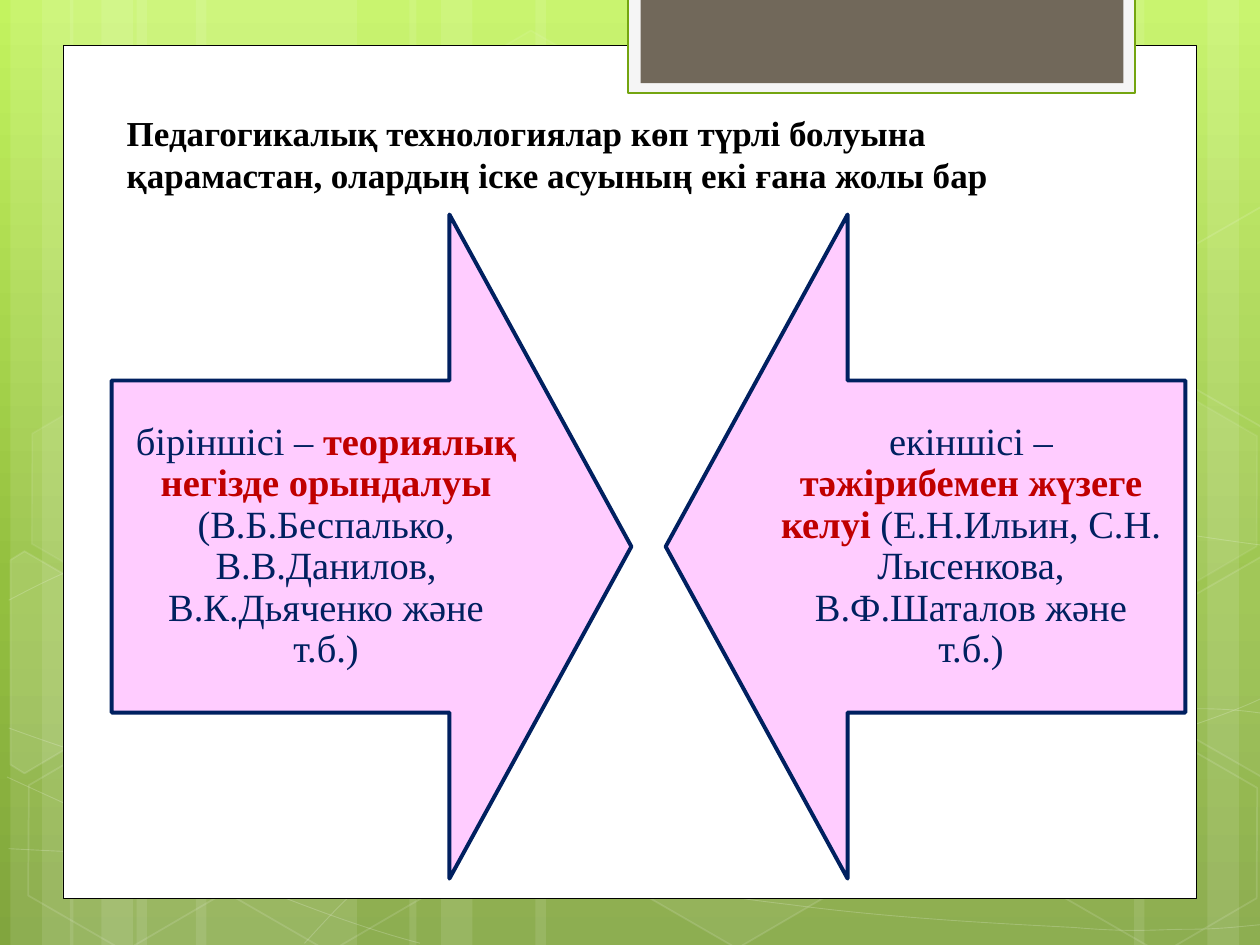
from copy import deepcopy
from dataclasses import dataclass

from lxml.etree import SubElement
from pptx import Presentation
from pptx.dml.color import RGBColor
from pptx.enum.shapes import MSO_SHAPE
from pptx.enum.text import MSO_ANCHOR, MSO_AUTO_SIZE, PP_ALIGN
from pptx.oxml.ns import qn
from pptx.util import Pt

RECT, HEXAGON = MSO_SHAPE.RECTANGLE, MSO_SHAPE.HEXAGON
RIGHT, LEFT = MSO_SHAPE.RIGHT_ARROW, MSO_SHAPE.LEFT_ARROW
TOP, MIDDLE = MSO_ANCHOR.TOP, MSO_ANCHOR.MIDDLE
NO_FIT = MSO_AUTO_SIZE.NONE
AT_LEFT, CENTER = PP_ALIGN.LEFT, PP_ALIGN.CENTER


@dataclass(frozen=True)
class Theme:
    font: str = "Times New Roman"
    head: int = 20
    body: int = 22
    sky: tuple = ((0, "C3F35F"), (62, "93BF3F"), (100, "81A53E"))
    white: str = "FFFFFF"
    black: str = "000000"
    pale: str = "F5F5F5"
    green: str = "74A510"
    taupe: str = "71685A"
    pink: str = "FFCCFF"
    navy: str = "002060"
    red: str = "C00000"


class Deck:
    def __init__(self, theme):
        self.theme = theme
        self.file = Presentation()
        self.file.slide_width, self.file.slide_height = Pt(720), Pt(540)
        self.layout = self.file.slide_layouts[5]
        self.slide = self.file.slides.add_slide(self.layout)
        self.shapes = self.slide.shapes

    def backdrop(self):
        fill = self.slide.background.fill
        fill.gradient()
        fill.gradient_angle = 270
        stops = next(self.slide._element.iter(qn("a:gsLst")))
        stops.append(deepcopy(stops[-1]))
        for stop, (at, color) in zip(fill.gradient_stops, self.theme.sky):
            stop.position = at / 100
            stop.color.rgb = RGBColor.from_string(color)

    def settle(self):
        """Move the decor drawn so far to the slide's layout."""
        for shape in list(self.shapes):
            if not shape.is_placeholder:
                self.layout.shapes._spTree.append(shape._element)

    def paint(self, shape, fill=None, line=None, width=1, clear=(100, 100)):
        """Set fill and line; clear holds their opacities in percent."""
        shape.shadow.inherit = False
        if fill:
            shape.fill.solid()
            shape.fill.fore_color.rgb = RGBColor.from_string(fill)
        else:
            shape.fill.background()
        if line:
            shape.line.color.rgb = RGBColor.from_string(line)
            shape.line.width = Pt(width)
        else:
            shape.line.fill.background()
        for base, part in zip(("a:solidFill", "a:ln/a:solidFill"), clear):
            for node in shape._element.spPr.xpath(base + "/a:srgbClr"):
                if part < 100:
                    SubElement(node, qn("a:alpha"), val=str(part * 1000))

    def block(self, kind, box, **style):
        shape = self.shapes.add_shape(kind, *map(Pt, box))
        self.paint(shape, **style)
        return shape

    def outline(self, points, close=False, **style):
        spots = [(Pt(x), Pt(y)) for x, y in points]
        pen = self.shapes.build_freeform(*spots[0])
        pen.add_line_segments(spots[1:], close=close)
        shape = pen.convert_to_shape()
        self.paint(shape, **style)
        return shape

    def curve(self, knots):
        """Draw a chain of cubic curves: a start, then three points each."""
        shape = self.outline(knots, line=self.theme.white, width=0.5,
                             clear=(100, 20))
        track = next(shape._element.iter(qn("a:path")))
        legs = track.findall(qn("a:lnTo"))
        for i in range(0, len(legs), 3):
            bend = SubElement(track, qn("a:cubicBezTo"))
            for leg in legs[i:i + 3]:
                bend.append(leg[0])
                track.remove(leg)

    def hexagon(self, x, y, glow, edge):
        white = self.theme.white
        shape = self.block(HEXAGON, (x, y, 126, 109.5), line=white,
                           fill=white if glow else None, clear=(glow, edge))
        shape.adjustments[0] = 0.285
        shape.rotation = 30

    def title(self, text, box):
        shape = self.shapes.title
        shape.left, shape.top, shape.width, shape.height = map(Pt, box)
        frame = shape.text_frame
        frame.text = text
        frame.auto_size, frame.vertical_anchor = NO_FIT, TOP
        para = frame.paragraphs[0]
        para.alignment = AT_LEFT
        font = para.font
        font.name, font.size, font.bold = self.theme.font, Pt(self.theme.head), True
        font.color.rgb = RGBColor.from_string(self.theme.black)

    def arrow(self, kind, x, runs):
        look = self.theme
        shape = self.block(kind, (x, 122.6, 297, 379.5), fill=look.pink,
                           line=look.navy, width=2.25)
        shape.adjustments[0], shape.adjustments[1] = 0.5, 0.35
        frame = shape.text_frame
        frame.word_wrap, frame.vertical_anchor = True, MIDDLE
        frame.margin_left = frame.margin_right = Pt(12.3)
        frame.margin_top = frame.margin_bottom = Pt(12.3)
        para = frame.paragraphs[0]
        para.alignment, para.line_spacing = CENTER, 0.9
        para.font.name, para.font.size = look.font, Pt(look.body)
        for text, strong in runs:
            run = para.add_run()
            run.text, run.font.bold = text, strong
            color = look.red if strong else look.navy
            run.font.color.rgb = RGBColor.from_string(color)


STRIPS = [(78, 126), (6, 36), (24, 60), (112, 126), (40, 36), (58, 60),
          (528, 126), (690, 36), (648, 60), (306, 222), (234, 36), (252, 60)]
CURVES = [
    [(5, 485), (44, 487), (83, 489), (137, 488), (191, 487), (258, 486),
     (330, 479), (402, 472), (504, 458), (570, 444), (636, 431), (703, 409),
     (725, 397)],
    [(5, 343), (26, 332), (47, 321), (87, 310), (128, 300), (186, 284),
     (250, 279), (314, 274), (392, 273), (471, 279), (550, 284), (682, 307),
     (725, 312)],
    [(4, 444), (91, 484), (178, 523), (240, 539)],
    [(5, 416), (27, 424), (50, 432), (92, 444), (134, 454), (197, 472),
     (257, 485), (317, 497), (392, 510), (452, 517), (512, 525), (576, 528),
     (614, 530), (648, 533), (662, 531), (680, 531), (699, 531), (712, 529),
     (725, 528)],
    [(174, 539), (187, 525), (200, 510), (217, 498), (235, 485), (259, 470),
     (279, 460), (300, 450), (312, 446), (338, 438), (364, 431), (413, 421),
     (438, 416), (464, 411), (467, 411), (490, 410), (512, 408), (547, 405),
     (572, 405), (597, 404), (638, 405), (686, 405), (699, 405), (711, 406),
     (724, 408)],
]
HEXAGONS = [(240.5, 26, 4, 8), (358, 424, 6, 12), (8, 425.5, 0, 12),
            (10, 224.5, 7, 8), (125, 426, 0, 12), (542, 326, 10, 12),
            (600.5, 427, 0, 12), (600.5, 226, 7, 8)]
WEST = [(6, 320), (14, 315), (69, 347), (68, 410), (14, 442), (6, 437)]
EAST = [(667, 349), (721, 318), (726, 321), (726, 441), (721, 444), (667, 413)]


def main():
    look = Theme()
    deck = Deck(look)

    # Green backdrop with light strips, curves and hexagons
    deck.backdrop()
    for x, width in STRIPS:
        deck.block(RECT, (x, 0, width, 540), fill=look.white, clear=(10, 100))
    for knots in CURVES:
        deck.curve(knots)
    for spot in HEXAGONS:
        deck.hexagon(*spot)
    north = [(x, y - 200) for x, y in EAST]
    for points, glow in ((WEST, 10), (EAST, 4), (north, 0)):
        deck.outline(points, close=True, fill=look.white if glow else None,
                     line=look.white, clear=(glow, 12))

    # White panel and the tab on its top edge
    deck.block(RECT, (36, 26, 648, 487.2), fill=look.white, line=look.black,
               width=0.5)
    deck.block(RECT, (359, -1.5, 289.5, 54.5), fill=look.pale, line=look.green,
               width=1.25)
    deck.block(RECT, (366, -1.5, 276, 49), fill=look.taupe)
    deck.settle()

    # Title
    deck.title("Педагогикалық технологиялар көп түрлі болуына қарамастан, "
               "олардың іске асуының екі ғана жолы бар", (65.2, 60.1, 584, 55.5))

    # Two facing arrows
    deck.arrow(RIGHT, 63.8, [
        ("біріншісі – ", False), ("теориялық негізде орындалуы ", True),
        ("(В.Б.Беспалько, В.В.Данилов, В.К.Дьяченко жəне т.б.)", False)])
    deck.arrow(LEFT, 380.4, [
        ("екіншісі – ", False), ("тəжірибемен жүзеге келуі ", True),
        ("(Е.Н.Ильин, С.Н. Лысенкова, В.Ф.Шаталов жəне т.б.)", False)])

    deck.file.save("out.pptx")


if __name__ == "__main__":
    main()
